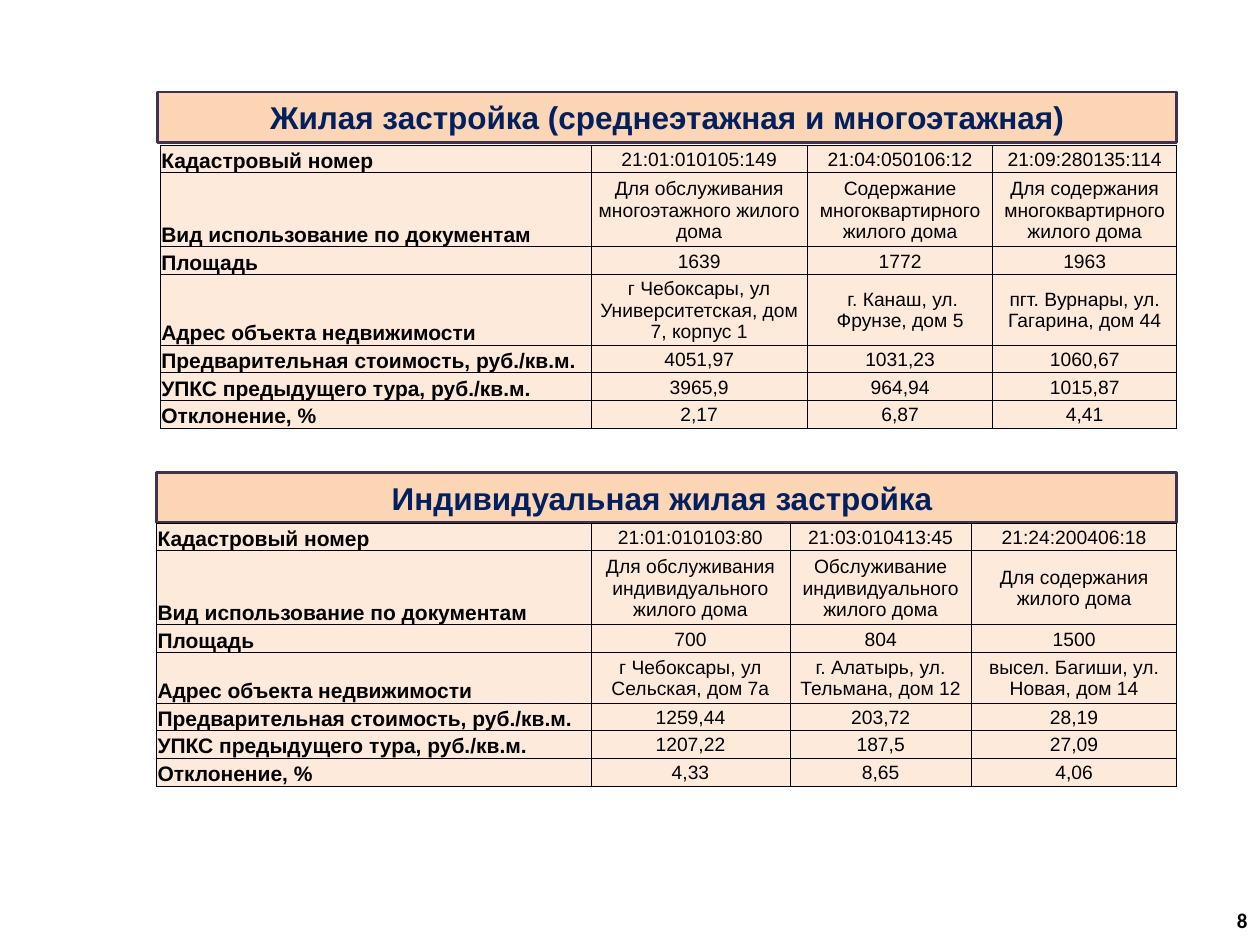
from dataclasses import dataclass

from lxml import etree
from pptx import Presentation
from pptx import util as u
from pptx.dml.color import RGBColor
from pptx.enum import shapes, text
from pptx.oxml import ns


@dataclass(frozen=True)
class Theme:
    banner_fill: str = "FCD5B5"
    banner_line: str = "403152"
    banner_text: str = "002060"
    cell_fill: str = "FDEADA"
    ink: str = "000000"
    font: str = "Arial"
    number_font: str = "Calibri"
    banner_size: int = 18
    label_size: int = 12
    value_size: int = 11
    border: float = 0.5


class PageBuilder:
    def __init__(self, page, theme):
        self.page = page
        self.theme = theme

    def set_words(self, frame, words, size, color, bold, align, font=None):
        para = frame.paragraphs[0]
        para.text = words
        para.alignment = align
        para.font.name = font or self.theme.font
        para.font.size = u.Pt(size)
        para.font.bold = bold
        para.font.color.rgb = RGBColor.from_string(color)

    def banner(self, words, left, top, width, height=0.4):
        theme = self.theme
        box = self.page.shapes.add_shape(
            shapes.MSO_SHAPE.RECTANGLE,
            *map(u.Inches, (left, top, width, height)))
        box.shadow.inherit = False
        box.fill.solid()
        box.fill.fore_color.rgb = RGBColor.from_string(theme.banner_fill)
        box.line.color.rgb = RGBColor.from_string(theme.banner_line)
        box.line.width = u.Pt(1.5)
        frame = box.text_frame
        frame.word_wrap = True
        frame.vertical_anchor = text.MSO_ANCHOR.MIDDLE
        self.set_words(frame, words, theme.banner_size, theme.banner_text,
                       True, text.PP_ALIGN.CENTER)

    def borders(self, cell):
        properties = cell._tc.get_or_add_tcPr()
        for side in ("lnL", "lnR", "lnT", "lnB"):
            line = etree.SubElement(properties, ns.qn(f"a:{side}"),
                                    w=str(u.Pt(self.theme.border)))
            fill = etree.SubElement(line, ns.qn("a:solidFill"))
            etree.SubElement(fill, ns.qn("a:srgbClr"), val=self.theme.ink)

    def cell(self, cell, words, is_label):
        theme = self.theme
        self.borders(cell)
        cell.fill.solid()
        cell.fill.fore_color.rgb = RGBColor.from_string(theme.cell_fill)
        cell.margin_left = cell.margin_right = cell.margin_top = u.Inches(0.01)
        cell.margin_bottom = 0
        if is_label:
            anchor, size, align = (text.MSO_ANCHOR.BOTTOM, theme.label_size,
                                   text.PP_ALIGN.LEFT)
        else:
            anchor, size, align = (text.MSO_ANCHOR.MIDDLE, theme.value_size,
                                   text.PP_ALIGN.CENTER)
        cell.vertical_anchor = anchor
        self.set_words(cell.text_frame, words, size, theme.ink, is_label,
                       align)

    def table(self, rows, left, top, widths, heights):
        table = self.page.shapes.add_table(
            len(rows), len(widths), u.Inches(left), u.Inches(top),
            u.Inches(sum(widths)), u.Inches(sum(heights))).table
        table.first_row = False
        table.horz_banding = False
        for column, width in zip(table.columns, widths):
            column.width = u.Inches(width)
        for row, height, values in zip(table.rows, heights, rows):
            row.height = u.Inches(height)
            for index, words in enumerate(values):
                self.cell(row.cells[index], words, index == 0)

    def page_number(self, words):
        box = self.page.shapes.add_textbox(
            *map(u.Inches, (7.67, 7.1, 2.33, 0.4)))
        box.text_frame.word_wrap = True
        box.text_frame.vertical_anchor = text.MSO_ANCHOR.MIDDLE
        self.set_words(box.text_frame, words, self.theme.label_size,
                       self.theme.ink, True, text.PP_ALIGN.RIGHT,
                       self.theme.number_font)


LABELS = (
    "Кадастровый номер",
    "Вид использование по документам",
    "Площадь",
    "Адрес объекта недвижимости",
    "Предварительная стоимость, руб./кв.м.",
    "УПКС предыдущего тура, руб./кв.м.",
    "Отклонение, %",
)

APARTMENTS = (
    ("21:01:010105:149", "21:04:050106:12", "21:09:280135:114"),
    ("Для обслуживания многоэтажного жилого дома",
     "Содержание многоквартирного жилого дома",
     "Для содержания многоквартирного жилого дома"),
    ("1639", "1772", "1963"),
    ("г Чебоксары, ул Университетская, дом 7, корпус 1",
     " г. Канаш, ул. Фрунзе, дом 5",
     "пгт. Вурнары, ул. Гагарина, дом 44"),
    ("4051,97", "1031,23", "1060,67"),
    ("3965,9", "964,94", "1015,87"),
    ("2,17", "6,87", "4,41"),
)

HOUSES = (
    ("21:01:010103:80", "21:03:010413:45", "21:24:200406:18"),
    ("Для обслуживания индивидуального жилого дома",
     "Обслуживание индивидуального жилого дома",
     "Для содержания жилого дома"),
    ("700", "804", "1500"),
    ("г Чебоксары, ул Сельская, дом 7а",
     "г. Алатырь, ул. Тельмана, дом 12",
     "высел. Багиши, ул. Новая, дом 14"),
    ("1259,44", "203,72", "28,19"),
    ("1207,22", "187,5", "27,09"),
    ("4,33", "8,65", "4,06"),
)


def labelled(values):
    return [(label, *row) for label, row in zip(LABELS, values)]


def row_heights(address_height):
    line = 0.22
    return (line, 0.59, line, address_height, line, line, line)


def main():
    deck = Presentation()
    deck.slide_width = u.Inches(10)
    deck.slide_height = u.Inches(7.5)
    page = deck.slides.add_slide(deck.slide_layouts[6])
    builder = PageBuilder(page, Theme())

    builder.page_number("8")
    builder.banner("Жилая застройка (среднеэтажная и многоэтажная)",
                   1.25, 0.73, 8.09)
    builder.table(labelled(APARTMENTS), 1.27, 1.15,
                  (3.42, 1.72, 1.47, 1.46), row_heights(0.56))
    builder.banner("Индивидуальная жилая застройка ", 1.24, 3.75, 8.1)
    builder.table(labelled(HOUSES), 1.24, 4.15,
                  (3.45, 1.58, 1.44, 1.63), row_heights(0.4))
    deck.save("out.pptx")


if __name__ == "__main__":
    main()
